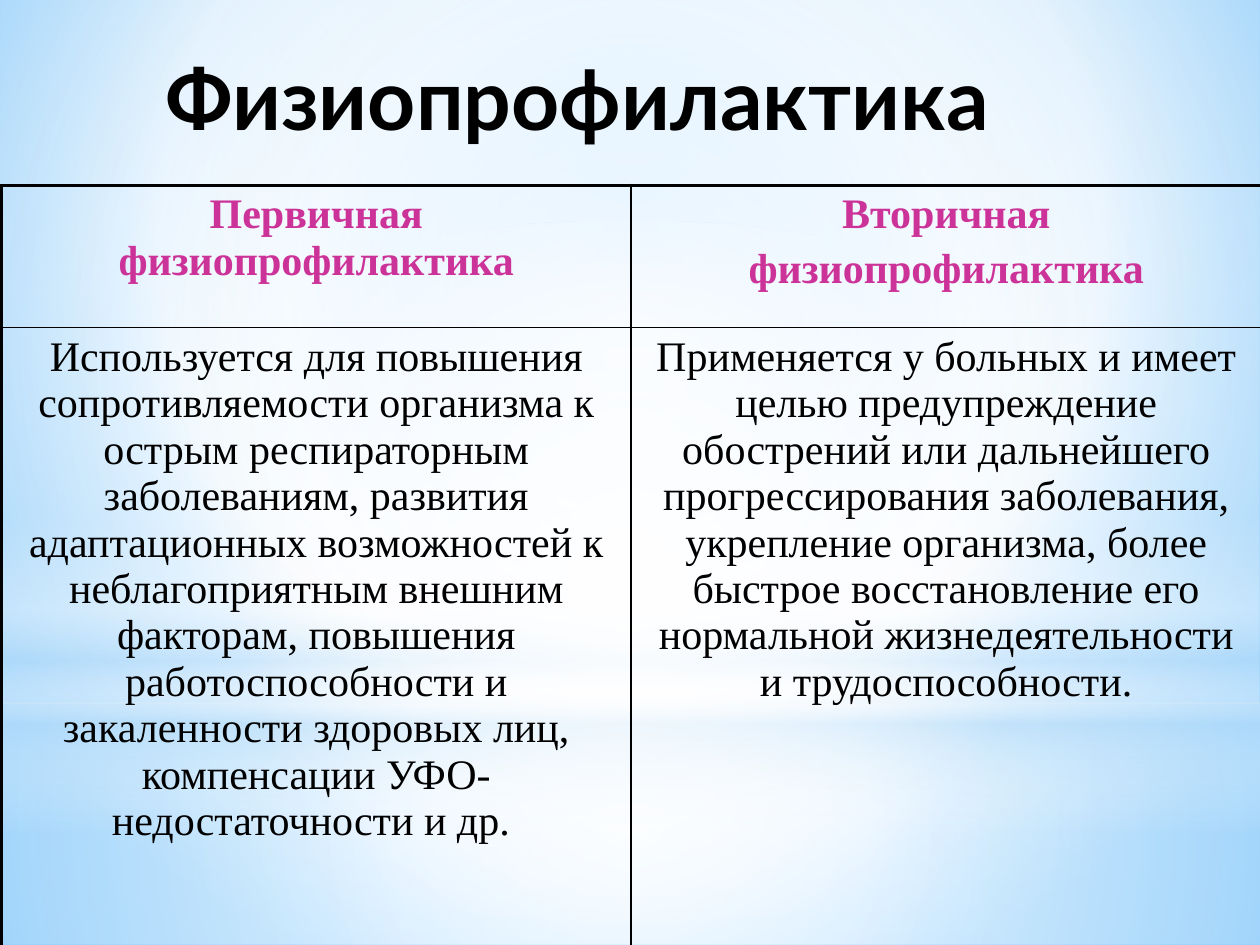
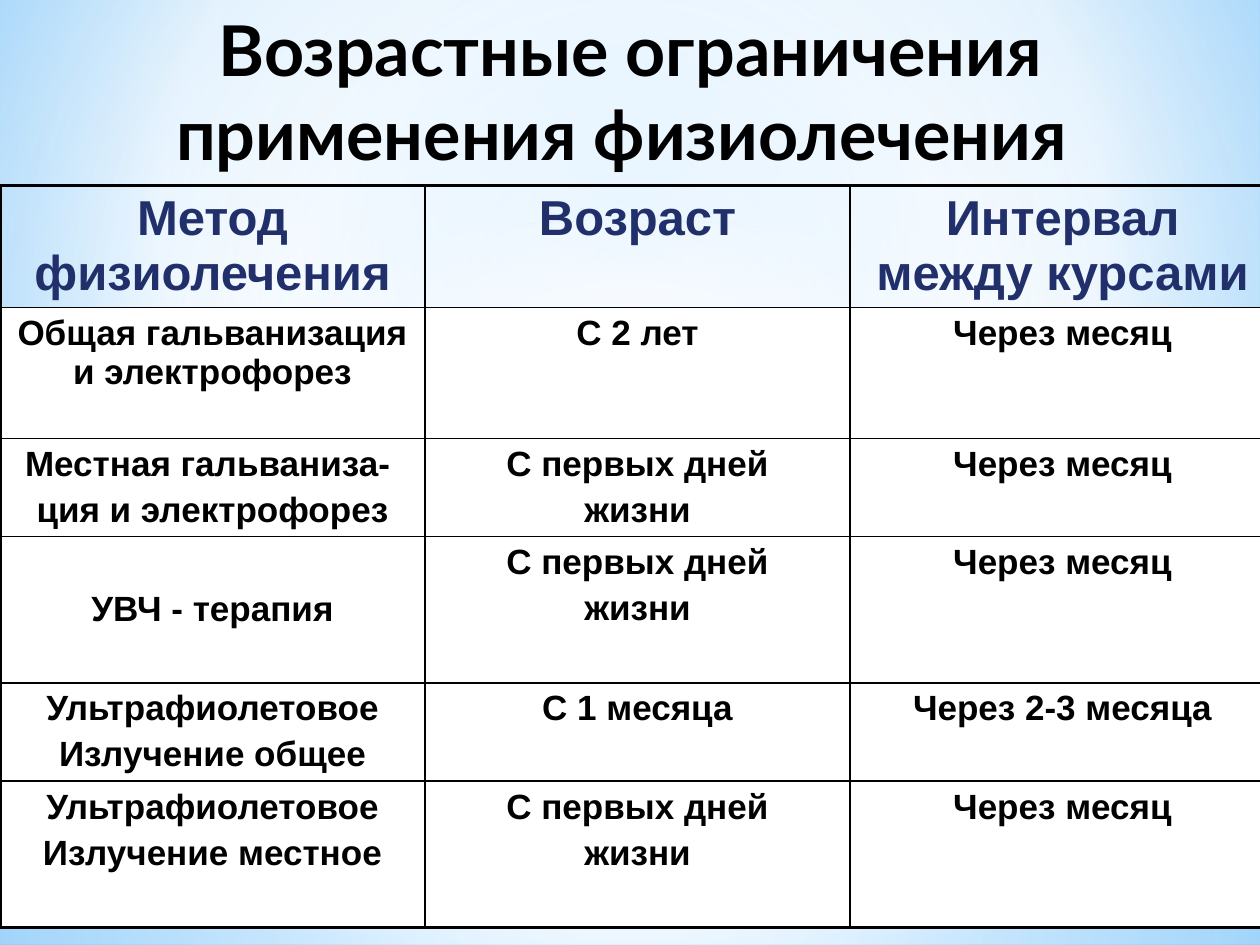
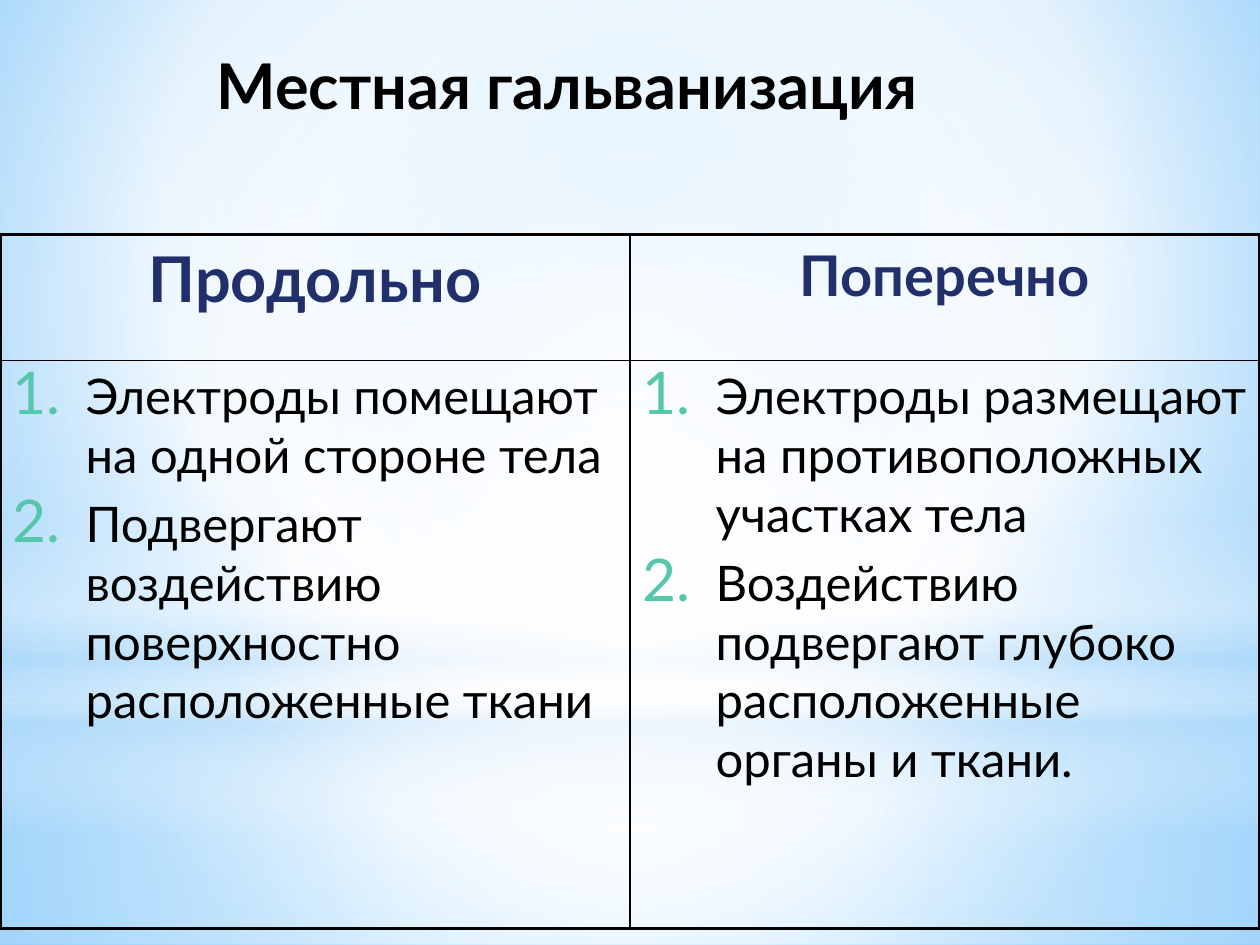
from lxml import etree
from pptx import Presentation
from pptx.dml.color import RGBColor
from pptx.enum.shapes import MSO_SHAPE
from pptx.enum.text import MSO_ANCHOR, MSO_AUTO_SIZE, PP_ALIGN
from pptx.oxml.ns import qn
from pptx.util import Inches, Pt

RECT, OVAL = MSO_SHAPE.RECTANGLE, MSO_SHAPE.OVAL
TOP, FIXED = MSO_ANCHOR.TOP, MSO_AUTO_SIZE.NONE
CENTER, LEFT = PP_ALIGN.CENTER, PP_ALIGN.LEFT
TITLE_ONLY = 5

HUES = {
    "black": "000000", "white": "FFFFFF", "pink": "CC3399", "navy": "21306A",
    "mint": "56C7AA", "sky": "9ED5FF", "blue": "5BB9FF", "pale": "B4DCFA",
}
THICK, THIN = 2.25, 1
MIDDLE = (50, 50, 50, 50)

# Stops are (position %, hue, opacity %).
BACK = [(0, "sky", 100), (60, "white", 100), (100, "blue", 100)]
BANDS = [
    (RECT, (0, 5.58, 10, 1.92), MIDDLE,
     [(0, "white", 91), (37, "white", 76), (100, "pale", 79)]),
    (RECT, (0, 0, 10, 5.58), MIDDLE,
     [(0, "white", 89), (48, "white", 62), (100, "pale", 79)]),
    (RECT, (0, 4.12, 10, 2.5), None,
     [(0, "white", 0), (29, "white", 30), (45, "pale", 40),
      (55, "white", 26), (65, "pale", 60), (100, "white", 0)]),
    (OVAL, (0, 1.75, 10, 5.58), MIDDLE,
     [(0, "white", 100), (56, "white", 0)]),
]


def node(up, tag, **attrs):
    child = etree.SubElement(up, qn(tag))
    for key, value in attrs.items():
        child.set(key, str(value))
    return child


def shade(props, stops, focus):
    """Swap the solid fill in props for a gradient, linear if focus is None."""
    solid = props.find(qn("a:solidFill"))
    grad = etree.Element(qn("a:gradFill"), rotWithShape="1")
    row = node(grad, "a:gsLst")
    for pos, hue, alpha in stops:
        stop = node(row, "a:gs", pos=pos * 1000)
        color = node(stop, "a:srgbClr", val=HUES[hue])
        if alpha < 100:
            node(color, "a:alpha", val=alpha * 1000)
    if focus:
        way = node(grad, "a:path", path="circle")
        sides = {side: part * 1000 for side, part in zip("ltrb", focus)}
        node(way, "a:fillToRect", **sides)
    else:
        node(grad, "a:lin", ang=90 * 60000, scaled=0)
    props.replace(solid, grad)


class Deck:
    def __init__(self):
        self.prs = Presentation()
        self.prs.slide_width = Inches(10)
        self.prs.slide_height = Inches(7.5)
        self.slide = None

    def start(self, text, box, size):
        layout = self.prs.slide_layouts[TITLE_ONLY]
        self.slide = self.prs.slides.add_slide(layout)
        title = self.slide.shapes.title
        self.place(title, box)
        frame = title.text_frame
        form = {"word_wrap": True, "auto_size": FIXED, "vertical_anchor": TOP}
        for key, value in form.items():
            setattr(frame, key, value)
        self.text(frame, [text], {"name": "Lato", "size": size, "bold": True})

    def place(self, shape, box):
        for key, value in zip(("left", "top", "width", "height"), box):
            setattr(shape, key, Inches(value))

    def back(self):
        """Put the background and the bands on the master."""
        master = self.prs.slide_master
        master.background.fill.solid()
        shade(master.element.find(".//" + qn("p:bgPr")), BACK, (20, 10, 20, 60))
        for kind, box, focus, stops in BANDS:
            band = self.slide.shapes.add_shape(kind, *map(Inches, box))
            band.shadow.inherit = False
            band.line.fill.background()
            band.fill.solid()
            shade(band.element.spPr, stops, focus)
            master.shapes.element.append(band.element)

    def text(self, frame, lines, form):
        form = {"hue": "black", "bold": False, "list": False, **form}
        for i, line in enumerate(lines):
            para = frame.paragraphs[0] if i == 0 else frame.add_paragraph()
            if form["list"]:
                self.number(para)
            para.alignment = LEFT if form["list"] else CENTER
            para.space_before = Pt(form["size"] * 0.2 if i else 0)
            run = para.add_run()
            run.text = line
            run.font.color.rgb = RGBColor.from_string(HUES[form["hue"]])
            looks = {"name": form["name"], "size": Pt(form["size"]),
                     "bold": form["bold"]}
            for key, value in looks.items():
                setattr(run.font, key, value)

    def number(self, para):
        props = para._p.get_or_add_pPr()
        props.set("marL", str(Inches(0.58)))
        props.set("indent", str(Inches(-0.58)))
        node(node(props, "a:buClr"), "a:srgbClr", val=HUES["mint"])
        node(props, "a:buSzPct", val=120000)
        node(props, "a:buAutoNum", type="arabicPeriod")

    def edge(self, cell, widths):
        props = cell._tc.get_or_add_tcPr()
        for i, (side, width) in enumerate(zip("LRTB", widths)):
            line = etree.Element(qn("a:ln" + side), w=str(Pt(width)))
            fill = node(line, "a:solidFill")
            node(fill, "a:srgbClr", val=HUES["black"])
            props.insert(i, line)

    def table(self, spot, width, highs, rows, head, body):
        """Draw a table; a cell is a list of lines, head and body are formats."""
        count = len(rows[0])
        box = (*spot, width, sum(highs))
        grid = self.slide.shapes.add_table(
            len(rows), count, *map(Inches, box)).table
        grid.first_row = grid.horz_banding = False
        for col in grid.columns:
            col.width = Inches(width / count)
        for r, (high, row) in enumerate(zip(highs, rows)):
            grid.rows[r].height = Inches(high)
            for c, lines in enumerate(row):
                cell = grid.cell(r, c)
                form = body if r else head[c]
                if "fill" in form:
                    cell.fill.solid()
                    color = RGBColor.from_string(HUES[form["fill"]])
                    cell.fill.fore_color.rgb = color
                else:
                    cell.fill.background()
                outer = (c == 0, c == count - 1, r == 0, r == len(rows) - 1)
                self.edge(cell, [THICK if out else THIN for out in outer])
                self.text(cell.text_frame, lines, form)
        return grid


def main():
    deck = Deck()

    deck.start(" Физиопрофилактика", (0, 0.32, 9, 1.06), 48)
    deck.back()
    serif = {"name": "Times New Roman", "size": 24}
    deck.table((0.01, 1.47), 10, [1.13, 4.91], [
        [["Первичная физиопрофилактика"], ["Вторичная", "физиопрофилактика"]],
        [["Используется для повышения сопротивляемости организма к острым "
          "респираторным заболеваниям, развития адаптационных возможностей к "
          "неблагоприятным внешним факторам, повышения работоспособности и "
          "закаленности здоровых лиц, компенсации УФО-недостаточности и др. "],
         ["Применяется у больных и имеет целью предупреждение обострений или "
          "дальнейшего прогрессирования заболевания, укрепление организма, "
          "более быстрое восстановление его нормальной жизнедеятельности и "
          "трудоспособности."]],
    ], [{**serif, "hue": "pink", "bold": True}] * 2, serif)

    deck.start("Возрастные ограничения применения физиолечения ",
               (0, 0, 10, 1.3), 40)
    sans = {"name": "Arial", "bold": True}
    birth = ["С первых дней", "жизни"]
    month = ["Через месяц"]
    ages = deck.table((0, 1.47), 10.12, [0.97, 1.04, 0.78, 1.16, 0.78, 1.16], [
        [["Метод физиолечения"], ["Возраст"], ["Интервал между курсами"]],
        [["Общая гальванизация и электрофорез"], ["С 2 лет"], month],
        [["Местная гальваниза- ", "ция и электрофорез"], birth, month],
        [["УВЧ - терапия"], birth, month],
        [["Ультрафиолетовое", "Излучение общее"], ["С 1 месяца"],
         ["Через 2-3 месяца"]],
        [["Ультрафиолетовое", "Излучение местное"], birth, month],
    ], [{**sans, "size": 28, "hue": "navy"}] * 3,
        {**sans, "size": 20, "fill": "white"})
    ages.cell(3, 0).margin_top = Inches(0.42)

    deck.start("Местная гальванизация", (0, 0.32, 9, 1.51), 36)
    lato = {"name": "Lato", "hue": "navy", "bold": True}
    deck.table((0, 1.86), 10, [1, 4.51], [
        [["Продольно"], ["Поперечно"]],
        [["Электроды помещают на одной стороне тела",
          "Подвергают воздействию поверхностно расположенные ткани"],
         ["Электроды размещают на противоположных участках тела",
          "Воздействию подвергают глубоко расположенные органы и ткани."]],
    ], [{**lato, "size": 36}, {**lato, "size": 32}],
        {"name": "Lato", "size": 28, "list": True})

    deck.prs.save("out.pptx")


if __name__ == "__main__":
    main()
